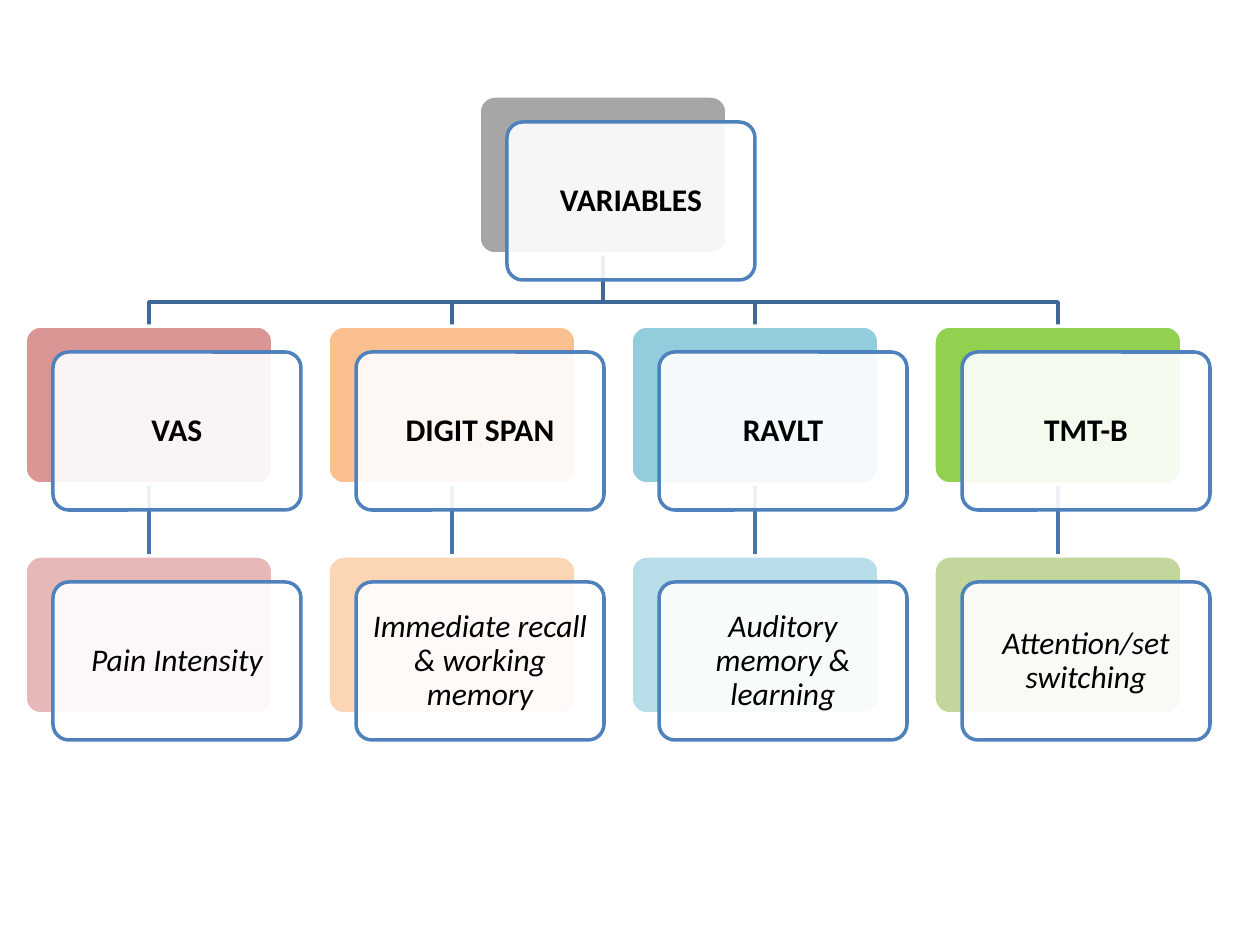
from lxml import etree
from pptx import Presentation
from pptx import util as u
from pptx.dml.color import RGBColor
from pptx.enum import shapes, text
from pptx.oxml import ns

SCALE = u.Inches(1) / 126
CARD_WIDTH, CARD_HEIGHT = 248, 158
SHIFT_X, SHIFT_Y = 28, 26
LEFT, TOP = 25, 96
COLUMN_PITCH, ROW_PITCH = 303, 230
BRANCH_DROP = 48

WHITE = RGBColor(0xFF, 0xFF, 0xFF)
BLACK = RGBColor(0x00, 0x00, 0x00)
BLUE = RGBColor(0x4F, 0x81, 0xBD)
BRANCH_BLUE = RGBColor(0x3F, 0x67, 0x97)
LINK_BLUE = RGBColor(0x48, 0x75, 0xAC)
GREY = RGBColor(0xA6, 0xA6, 0xA6)

TESTS = [
    ("VAS", RGBColor(0xD9, 0x96, 0x94), "Pain Intensity", RGBColor(0xE6, 0xB9, 0xB8)),
    ("DIGIT SPAN", RGBColor(0xFA, 0xC0, 0x90),
     "Immediate recall & working memory", RGBColor(0xFC, 0xD5, 0xB5)),
    ("RAVLT", RGBColor(0x93, 0xCD, 0xDD),
     "Auditory memory & learning", RGBColor(0xB7, 0xDE, 0xE8)),
    ("TMT-B", RGBColor(0x92, 0xD0, 0x50),
     "Attention/set switching", RGBColor(0xC3, 0xD6, 0x9B)),
]


def px(length):
    """Turn a length in px into EMU."""
    return u.Emu(round(length * SCALE))


def add_panel(slide, left, top, fill, line):
    """Add one rounded rectangle of card size."""
    panel = slide.shapes.add_shape(
        shapes.MSO_SHAPE.ROUNDED_RECTANGLE,
        px(left), px(top), px(CARD_WIDTH), px(CARD_HEIGHT))
    panel.adjustments[0] = 0.1
    panel.shadow.inherit = False
    panel.fill.solid()
    panel.fill.fore_color.rgb = fill
    panel.line.color.rgb = line
    panel.line.width = u.Pt(2)
    return panel


def add_card(slide, left, top, label, color, italic=False):
    """Add a coloured panel with a translucent labelled panel over it."""
    back = add_panel(slide, left, top, color, WHITE)
    front = add_panel(slide, left + SHIFT_X, top + SHIFT_Y, WHITE, BLUE)
    fill_color = front.fill._xPr.find(ns.qn("a:solidFill"))[0]
    etree.SubElement(fill_color, ns.qn("a:alpha"), val="90000")
    frame = front.text_frame
    frame.word_wrap = True
    frame.vertical_anchor = text.MSO_ANCHOR.MIDDLE
    frame.margin_left = frame.margin_right = px(9)
    frame.margin_top = frame.margin_bottom = px(9)
    paragraph = frame.paragraphs[0]
    paragraph.alignment = text.PP_ALIGN.CENTER
    paragraph.line_spacing = 0.9
    run = paragraph.add_run()
    run.text = label
    run.font.name = "Calibri"
    run.font.size = u.Pt(18)
    run.font.bold = not italic
    run.font.italic = italic
    run.font.color.rgb = BLACK
    return back


def add_branch(slide, start_x, start_y, end_x, end_y):
    """Draw the bent line from the root card to one test card."""
    bend_y = start_y + BRANCH_DROP
    builder = slide.shapes.build_freeform(start_x, start_y, scale=SCALE)
    builder.add_line_segments(
        [(start_x, bend_y), (end_x, bend_y), (end_x, end_y)], close=False)
    branch = builder.convert_to_shape()
    branch.shadow.inherit = False
    branch.fill.background()
    branch.line.color.rgb = BRANCH_BLUE
    branch.line.width = u.Pt(2)


def add_link(slide, upper, lower):
    """Join two cards of a column with a line behind all the cards."""
    link = slide.shapes.add_connector(shapes.MSO_CONNECTOR.STRAIGHT, 0, 0, 0, 0)
    link.begin_connect(upper, 2)
    link.end_connect(lower, 0)
    link.line.color.rgb = LINK_BLUE
    link.line.width = u.Pt(2)
    element = link._element
    etree.SubElement(element.spPr, ns.qn("a:effectLst"))
    element.getparent().insert(2, element)


def add_column(slide, left, top, test):
    """Add a test card, the measure below it and their link."""
    name, name_color, measure, measure_color = test
    upper = add_card(slide, left, top, name, name_color)
    lower = add_card(slide, left, top + ROW_PITCH, measure, measure_color, italic=True)
    add_link(slide, upper, lower)


def add_hierarchy(slide, left, top):
    """Add the root card, its branches and the test columns."""
    columns = [left + index * COLUMN_PITCH for index in range(len(TESTS))]
    root_left = (columns[0] + columns[-1]) // 2
    tests_top = top + ROW_PITCH
    middle = CARD_WIDTH // 2
    for column in columns:
        add_branch(slide, root_left + middle, top + CARD_HEIGHT,
                   column + middle, tests_top)
    add_card(slide, root_left, top, "VARIABLES", GREY)
    for column, test in zip(columns, TESTS):
        add_column(slide, column, tests_top, test)


def main():
    """Build and save the presentation."""
    presentation = Presentation()
    presentation.slide_width = px(1260)
    presentation.slide_height = px(945)
    slide = presentation.slides.add_slide(presentation.slide_layouts[6])
    add_hierarchy(slide, LEFT, TOP)
    presentation.save("out.pptx")


if __name__ == "__main__":
    main()
